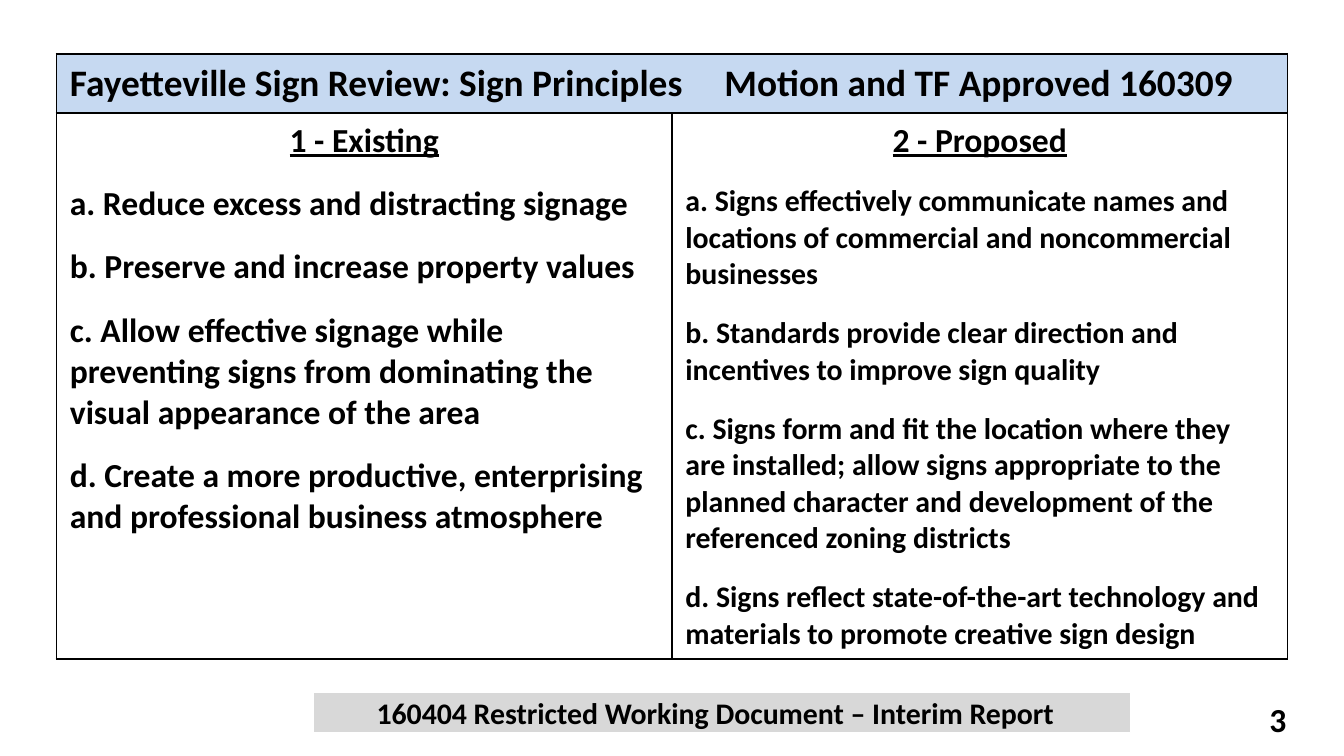
from dataclasses import dataclass

from lxml import etree
from pptx import Presentation
from pptx import util as u
from pptx.dml.color import RGBColor
from pptx.enum import shapes, text
from pptx.oxml.ns import qn

WIDE = 10
HIGH = WIDE * 9 / 16
ALIGN = text.PP_ALIGN


@dataclass(frozen=True)
class Theme:
    font: str = "Calibri"
    ink: str = "000000"
    paper: str = "FFFFFF"
    band: str = "C6D9F1"
    foot: str = "D8D8D8"
    title: int = 20
    head: int = 18
    small: int = 16
    gap: int = 12
    rule: float = 1


THEME = Theme()

TITLE = "Fayetteville Sign Review: Sign Principles\tMotion and TF Approved 160309"
LISTS = [
    ("1 - Existing", THEME.head, [
        "a. Reduce excess and distracting signage",
        "b. Preserve and increase property values",
        "c. Allow effective signage while preventing signs from dominating "
        "the visual appearance of the area",
        "d. Create a more productive, enterprising and professional "
        "business atmosphere",
    ]),
    ("2 - Proposed", THEME.small, [
        "a. Signs effectively communicate names and locations of commercial "
        "and noncommercial businesses",
        "b. Standards provide clear direction and incentives to improve "
        "sign quality",
        "c. Signs form and fit the location where they are installed; allow "
        "signs appropriate to the planned character and development of the "
        "referenced zoning districts",
        "d. Signs reflect state-of-the-art technology and materials to "
        "promote creative sign design",
    ]),
]
FOOT = "160404 Restricted Working Document – Interim Report"


def color(code):
    return RGBColor.from_string(code)


def write(frame, words, size, align=ALIGN.LEFT, under=False, gap=0,
          first=True, tab=None):
    """Put one paragraph in a text frame."""
    frame.word_wrap = True
    para = frame.paragraphs[0] if first else frame.add_paragraph()
    para.alignment = align
    if gap:
        para.space_before = u.Pt(gap)
    if tab:
        stops = etree.SubElement(para._p.get_or_add_pPr(), qn("a:tabLst"))
        etree.SubElement(stops, qn("a:tab"), pos=str(u.Inches(tab)), algn="l")
    run = para.add_run()
    run.text = words
    font = run.font
    font.name, font.size, font.bold = THEME.font, u.Pt(size), True
    font.underline = under
    font.color.rgb = color(THEME.ink)


def edge(cell):
    """Rule all four sides of a cell."""
    props = cell._tc.get_or_add_tcPr()
    for spot, side in enumerate("LRTB"):
        line = etree.Element(qn(f"a:ln{side}"), w=str(u.Pt(THEME.rule)))
        fill = etree.SubElement(line, qn("a:solidFill"))
        etree.SubElement(fill, qn("a:srgbClr"), val=THEME.ink)
        props.insert(spot, line)


def grid(slide, box):
    """Title band above the two lists of principles."""
    table = slide.shapes.add_table(2, len(LISTS), *box).table
    table.first_row = table.horz_banding = False
    table.rows[0].height = round(box[3] * 0.1)
    table.rows[1].height = box[3] - table.rows[0].height
    for cell in table.iter_cells():
        edge(cell)
        cell.fill.background()

    # Title band
    band = table.cell(0, 0)
    band.merge(table.cell(0, len(LISTS) - 1))
    band.fill.solid()
    band.fill.fore_color.rgb = color(THEME.band)
    write(band.text_frame, TITLE, THEME.title, tab=4.87)

    # Lists
    for col, (head, size, items) in enumerate(LISTS):
        frame = table.cell(1, col).text_frame
        write(frame, head, THEME.head, align=ALIGN.CENTER, under=True)
        for item in items:
            write(frame, item, size, gap=THEME.gap, first=False)


def footer(slide, box):
    """Grey status bar."""
    bar = slide.shapes.add_shape(shapes.MSO_SHAPE.RECTANGLE, *box)
    bar.shadow.inherit = False
    bar.fill.solid()
    bar.fill.fore_color.rgb = color(THEME.foot)
    bar.line.color.rgb = color(THEME.paper)
    bar.line.width = u.Pt(0.75)
    frame = bar.text_frame
    frame.vertical_anchor = text.MSO_ANCHOR.MIDDLE
    frame.margin_right = u.Inches(0.19)
    write(frame, FOOT, THEME.small, align=ALIGN.CENTER)


def number(slide, box):
    """Page number."""
    frame = slide.shapes.add_textbox(*box).text_frame
    write(frame, "3", THEME.head, align=ALIGN.RIGHT)


def area(*sides):
    return [u.Inches(side) for side in sides]


def main():
    deck = Presentation()
    deck.slide_width, deck.slide_height = area(WIDE, HIGH)
    slide = deck.slides.add_slide(deck.slide_layouts[6])
    side, base, tall = 0.42, 5.15, 0.3
    footer(slide, area(2.33, base, 6.08, tall))
    grid(slide, area(side, 0.4, WIDE - 2 * side, 4.43))
    number(slide, area(9.17, base, 0.5, tall))
    deck.save("out.pptx")


if __name__ == "__main__":
    main()
